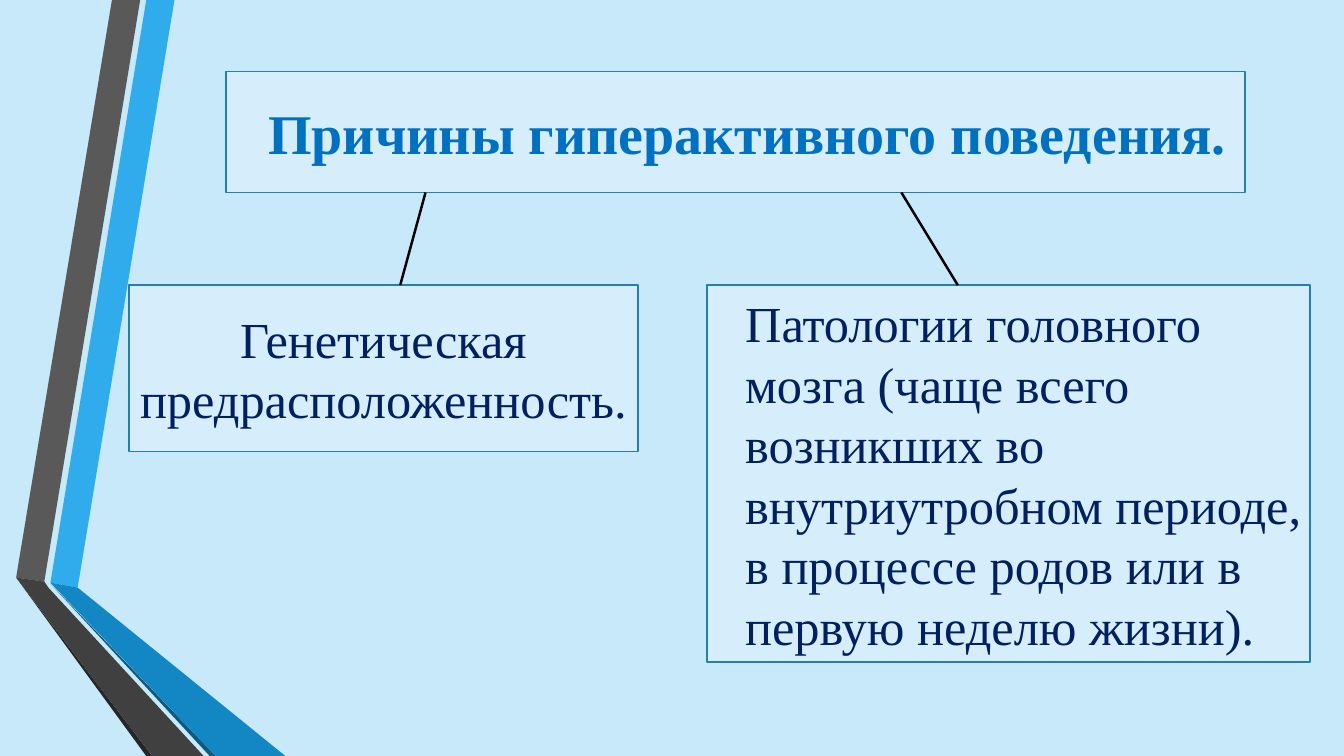
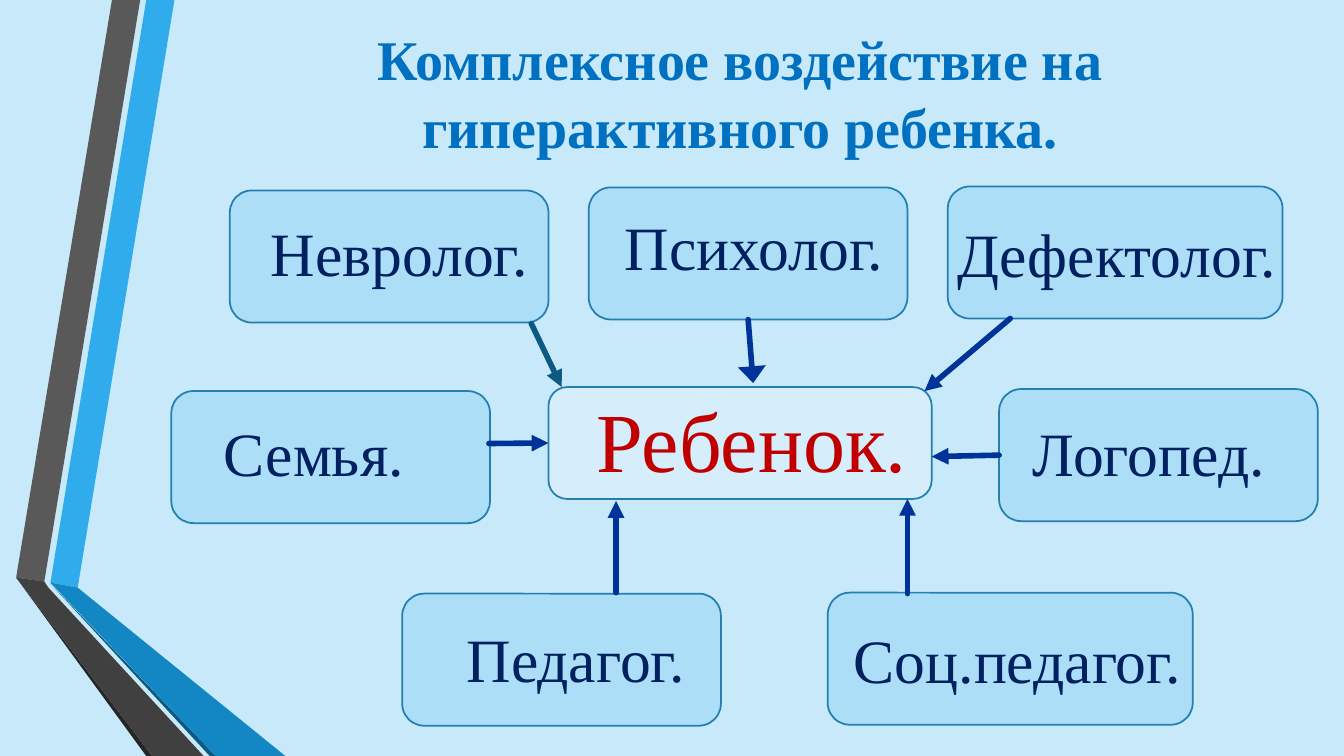
from dataclasses import dataclass

from lxml import etree
from pptx import Presentation
from pptx.dml.color import RGBColor
from pptx.enum.shapes import MSO_CONNECTOR, MSO_SHAPE
from pptx.enum.text import MSO_ANCHOR, PP_ALIGN
from pptx.oxml.ns import qn
from pptx.util import Inches, Pt

RECT = MSO_SHAPE.RECTANGLE
ROUNDED = MSO_SHAPE.ROUNDED_RECTANGLE
STRAIGHT = MSO_CONNECTOR.STRAIGHT
LEFT, CENTER = PP_ALIGN.LEFT, PP_ALIGN.CENTER
MIDDLE = MSO_ANCHOR.MIDDLE
LEFT_SIDE, BOTTOM_SIDE = 1, 2

WIDTH, HEIGHT = Inches(13.33), Inches(7.5)
BLANK_LAYOUT = 6


@dataclass(frozen=True)
class Theme:
    font: str = "Times New Roman"
    background: str = "C7E9FA"
    pale: str = "D6EEFB"
    sky: str = "ACDEF7"
    border: str = "247FAF"
    title: str = "0070C0"
    body: str = "002060"
    accent: str = "C00000"
    link: str = "000000"
    arrow: str = "003399"
    arrow_teal: str = "0C5A82"
    title_size: int = 40
    body_size: int = 36
    role_size: int = 44
    child_size: int = 60
    border_width: float = 1.25
    link_width: float = 1.75
    arrow_width: float = 4


THEME = Theme()

# Outlines in percent of the slide's width and height
RIBBONS = [
    ("30ACEC", [(3.75, 77.07), (5.78, 77.73), (12.98, 0), (10.88, 0)]),
    ("595959", [(10.43, 0), (8.33, 0), (1.2, 76.4), (3.3, 76.93)]),
    ("262626", [(1.2, 76.4), (10.88, 100), (11.33, 100)]),
    ("0C5A82", [(3.75, 77.2), (15.6, 100), (16.05, 100)]),
    ("1287C3", [(3.75, 77.07), (16.05, 100), (21.23, 100), (5.78, 77.73)]),
    ("404040", [(15.15, 100), (3.6, 77.73), (3.3, 76.93), (1.2, 76.4),
                (11.33, 100)]),
]

ROLE_WIDTH, ROLE_HEIGHT = 23.71, 17.47
# Role: left, top, width, label shift across and down
ROLES = {
    "Невролог.": (17.1, 25.2, ROLE_WIDTH, 0.75, -0.6),
    "Семья.": (12.75, 51.73, ROLE_WIDTH, -1.24, -0.73),
    "Психолог.": (43.81, 24.8, ROLE_WIDTH, 0.45, -1),
    "Педагог.": (29.93, 78.53, ROLE_WIDTH, 1.05, -0.2),
    "Соц.педагог.": (61.59, 78.4, 27.16, 0.53, 0),
    "Логопед.": (74.34, 51.47, ROLE_WIDTH, -0.71, -0.47),
    "Дефектолог.": (70.52, 24.67, 24.91, 0.11, 0),
}


def across(percent):
    return round(WIDTH * percent / 100)


def down(percent):
    return round(HEIGHT * percent / 100)


def frame(left, top, width, height):
    return across(left), down(top), across(width), down(height)


def paint(shape, fill):
    shape.shadow.inherit = False
    shape.fill.solid()
    shape.fill.fore_color.rgb = RGBColor.from_string(fill)


def new_slide(prs):
    slide = prs.slides.add_slide(prs.slide_layouts[BLANK_LAYOUT])
    backdrop = slide.background.fill
    backdrop.solid()
    backdrop.fore_color.rgb = RGBColor.from_string(THEME.background)
    for color, outline in RIBBONS:
        points = [(across(x), down(y)) for x, y in outline]
        builder = slide.shapes.build_freeform(*points[0])
        builder.add_line_segments(points[1:], close=True)
        ribbon = builder.convert_to_shape()
        paint(ribbon, color)
        ribbon.line.fill.background()
    return slide


def write(shape, text, size, color, bold=False, align=CENTER, wrap=True,
          indent=0, shift=(0, 0)):
    """Set middle-anchored text; shift moves it off the shape's centre."""
    dx, dy = shift
    box = shape.text_frame
    box.word_wrap = wrap
    box.vertical_anchor = MIDDLE
    box.margin_left = across(indent + max(2 * dx, 0))
    box.margin_right = across(max(-2 * dx, 0))
    box.margin_top = down(max(2 * dy, 0))
    box.margin_bottom = down(max(-2 * dy, 0))
    paragraph = box.paragraphs[0]
    paragraph.alignment = align
    run = paragraph.add_run()
    run.text = text
    run.font.name = THEME.font
    run.font.size = Pt(size)
    run.font.bold = bold
    run.font.color.rgb = RGBColor.from_string(color)


def add_panel(slide, place, preset=RECT, fill=THEME.pale):
    panel = slide.shapes.add_shape(preset, *frame(*place))
    paint(panel, fill)
    panel.line.color.rgb = RGBColor.from_string(THEME.border)
    panel.line.width = Pt(THEME.border_width)
    return panel


def add_link(slide, start, end, color=THEME.link, width=THEME.link_width):
    """Join two ends, each a point in percent or a (shape, side) pair."""
    ends = [(0, 0) if hasattr(e[0], "shape_id") else (across(e[0]), down(e[1]))
            for e in (start, end)]
    link = slide.shapes.add_connector(STRAIGHT, *ends[0], *ends[1])
    for spot, join in ((start, link.begin_connect), (end, link.end_connect)):
        if hasattr(spot[0], "shape_id"):
            join(*spot)
    link.line.color.rgb = RGBColor.from_string(color)
    link.line.width = Pt(width)
    etree.SubElement(link._element.spPr, qn("a:effectLst"))
    return link


def add_arrow(slide, start, end, color=THEME.arrow, head_width="med"):
    arrow = add_link(slide, start, end, color, THEME.arrow_width)
    line = arrow.line._get_or_add_ln()
    line.set("cap", "rnd")
    etree.SubElement(line, qn("a:round"))
    etree.SubElement(line, qn("a:tailEnd"), type="triangle", w=head_width,
                     len="med")


def build_causes(prs):
    slide = new_slide(prs)
    heading = add_panel(slide, (16.8, 9.47, 75.85, 16))
    write(heading, "Причины гиперактивного поведения.", THEME.title_size,
          THEME.title, bold=True, align=LEFT, indent=3.15)

    causes_top = 37.73
    genetics = add_panel(slide, (9.6, causes_top, 37.88, 22))
    write(genetics, "Генетическая предрасположенность.", THEME.body_size,
          THEME.body)
    pathology = add_panel(slide, (52.59, causes_top, 44.86, 49.87))
    write(pathology,
          "Патологии головного мозга (чаще всего возникших во внутриутробном "
          "периоде, в процессе родов или в первую неделю жизни).",
          THEME.body_size, THEME.body, align=LEFT, indent=2.85)

    for x_start, x_end in ((31.66, 29.78), (67.07, 71.27)):
        add_link(slide, (x_start, 25.47), (x_end, causes_top))


def build_support(prs):
    slide = new_slide(prs)
    heading = slide.shapes.add_textbox(*frame(15.98, 2.53, 78.17, 19.33))
    write(heading, "Комплексное воздействие на гиперактивного ребенка.",
          THEME.title_size, THEME.title, bold=True)

    child = add_panel(slide, (40.81, 51.2, 28.51, 14.8), ROUNDED)
    write(child, "Ребенок.", THEME.child_size, THEME.accent, wrap=False,
          shift=(0.86, -0.53))

    panels = {}
    for role, (left, top, width, dx, dy) in ROLES.items():
        panels[role] = add_panel(slide, (left, top, width, ROLE_HEIGHT),
                                 ROUNDED, THEME.sky)
        write(panels[role], role, THEME.role_size, THEME.body, wrap=False,
              shift=(dx, dy))

    add_arrow(slide, (39.53, 42.8), (41.79, 51.2), THEME.arrow_teal)
    add_arrow(slide, (panels["Психолог."], BOTTOM_SIDE), (56.04, 50.67),
              head_width="lg")
    add_arrow(slide, (75.17, 42.13), (68.79, 51.73))
    add_arrow(slide, (36.38, 58.67), (child, LEFT_SIDE))
    add_arrow(slide, (panels["Логопед."], LEFT_SIDE), (69.32, 60.4))
    add_arrow(slide, (45.84, 78.4), (45.84, 66.27))
    add_arrow(slide, (67.52, 78.53), (67.52, 66))


def main():
    prs = Presentation()
    prs.slide_width, prs.slide_height = WIDTH, HEIGHT
    build_causes(prs)
    build_support(prs)
    prs.save("out.pptx")


if __name__ == "__main__":
    main()
